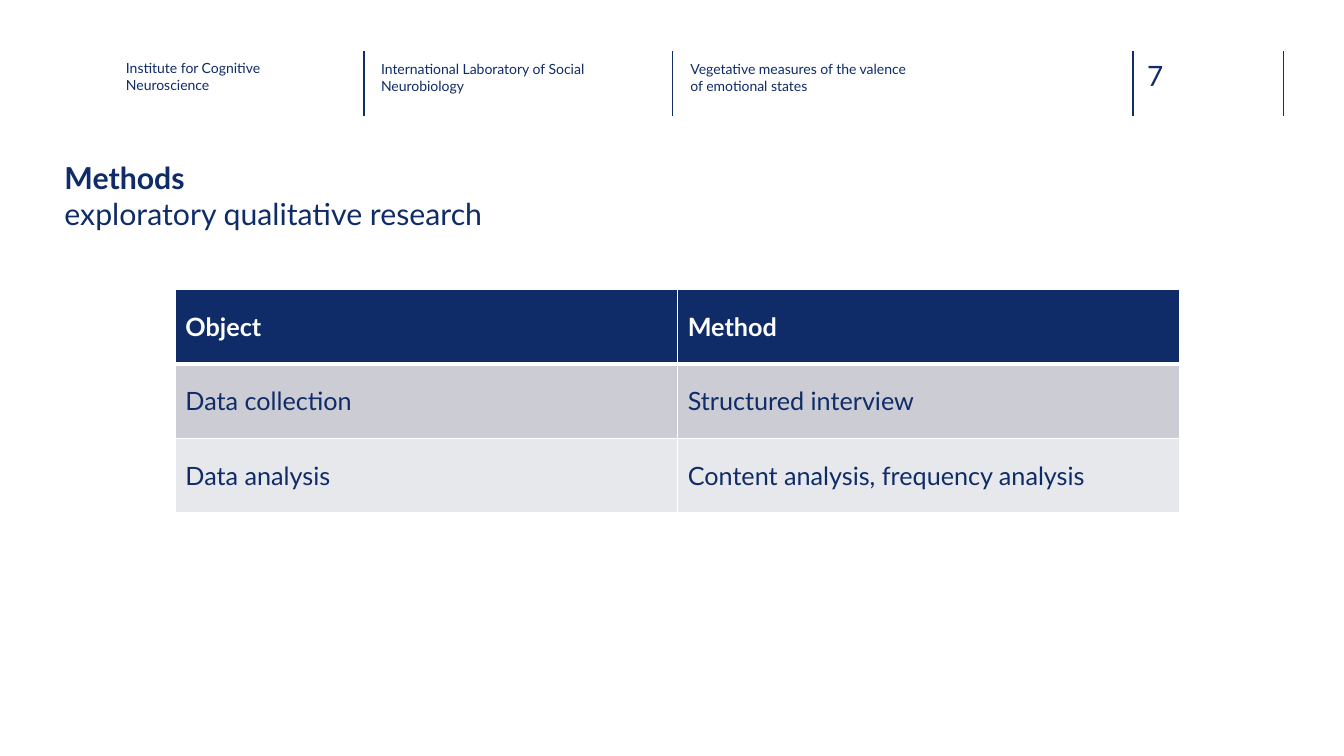
from lxml import etree
from pptx import Presentation
from pptx.dml.color import RGBColor
from pptx.enum import shapes, text
from pptx.oxml import ns
from pptx.util import Pt

HUES = {"navy": "0F2C68", "rule": "102D69", "white": "FFFFFF",
        "dark": "CCCDD4", "light": "E7E8EB"}
FONT = "Lato"
HEADS = [
    (90, 42.5, 150, "Institute for Cognitive Neuroscience"),
    (272.2, 43.2, 163, "International Laboratory of Social Neurobiology"),
    (493.2, 43.2, 163, "Vegetative measures of the valence of emotional states"),
]
RULES = [259.9, 480.2, 809.3, 916.6]
ROWS = [
    ("Object", "Method"),
    ("Data collection", "Structured interview"),
    ("Data analysis", "Content analysis, frequency analysis"),
]


def hue(name):
    return RGBColor.from_string(HUES[name])


def write(para, words, size=10, bold=False, color="navy"):
    run = para.add_run()
    run.text = words
    font = run.font
    font.name, font.size, font.bold = FONT, Pt(size), bold
    font.color.rgb = hue(color)


def add_text(slide, left, top, width, height, lines, **style):
    """Add a box with one paragraph per (words, bold) line."""
    box = slide.shapes.add_textbox(Pt(left), Pt(top), Pt(width), Pt(height))
    frame = box.text_frame
    frame.word_wrap = True
    frame.margin_left = frame.margin_right = 0
    frame.margin_top = frame.margin_bottom = 0
    for i, (words, bold) in enumerate(lines):
        para = frame.add_paragraph() if i else frame.paragraphs[0]
        write(para, words, bold=bold, **style)


def add_rule(slide, left, top=36.7, end=82.8):
    line = slide.shapes.add_connector(
        shapes.MSO_CONNECTOR.STRAIGHT, Pt(left), Pt(top), Pt(left), Pt(end))
    line.line.color.rgb = hue("rule")
    line.line.width = Pt(1)
    etree.SubElement(line._element.spPr, ns.qn("a:effectLst"))


def add_edge(cell, side, width):
    props = cell._tc.get_or_add_tcPr()
    edge = etree.SubElement(props, ns.qn("a:ln" + side), w=str(Pt(width)))
    fill = etree.SubElement(edge, ns.qn("a:solidFill"))
    etree.SubElement(fill, ns.qn("a:srgbClr"), val=HUES["white"])


def add_grid(slide, left, top, width, height):
    frame = slide.shapes.add_table(
        len(ROWS), len(ROWS[0]), Pt(left), Pt(top), Pt(width), Pt(height))
    fills = ["navy", "dark", "light"]
    for i, row in enumerate(ROWS):
        head = i == 0
        for j, words in enumerate(row):
            cell = frame.table.cell(i, j)
            cell.vertical_anchor = text.MSO_ANCHOR.MIDDLE
            write(cell.text_frame.paragraphs[0], words, size=18, bold=head,
                  color="white" if head else "navy")
            for side in "LRTB":
                thick = (i, side) in [(0, "B"), (1, "T")]
                add_edge(cell, side, 3 if thick else 1)
            cell.fill.solid()
            cell.fill.fore_color.rgb = hue(fills[i])


def main():
    deck = Presentation()
    deck.slide_width, deck.slide_height = Pt(960), Pt(540)
    slide = deck.slides.add_slide(deck.slide_layouts[6])
    for left in RULES:
        add_rule(slide, left)
    for left, top, width, words in HEADS:
        add_text(slide, left, top, width, 32.4, [(words, False)])
    add_text(slide, 819.4, 41.8, 52.6, 24.5, [("7", False)], size=20,
             color="rule")
    add_text(slide, 46.1, 113.8, 413.3, 61.2,
             [("Methods", True), ("exploratory qualitative research", False)],
             size=21.6)
    add_grid(slide, 125.3, 206.6, 717.6, 159.8)
    deck.save("out.pptx")


if __name__ == "__main__":
    main()
